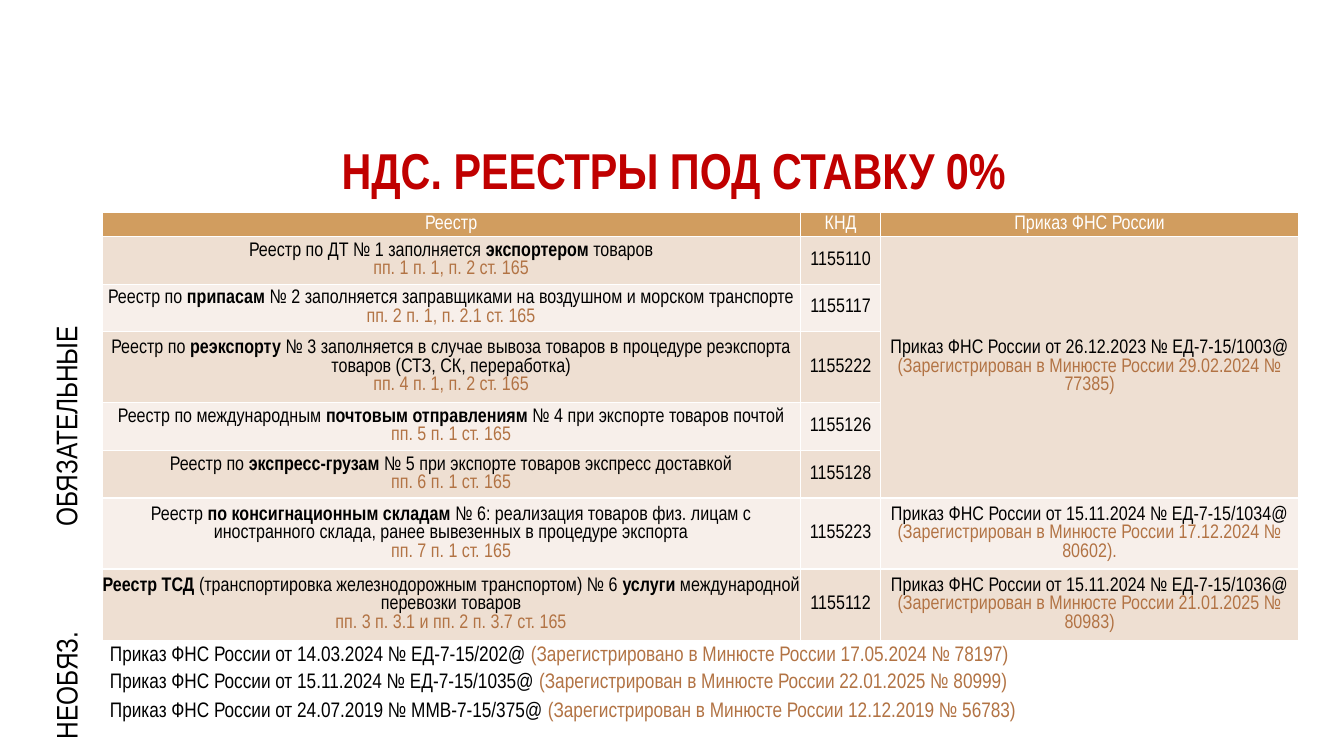
from pptx import Presentation
from pptx.dml.color import RGBColor
from pptx.enum.text import MSO_ANCHOR, PP_ALIGN
from pptx.util import Cm, Pt

FONT = "Arial Narrow"
BLACK, BROWN, WHITE, RED = "000000", "B27344", "FFFFFF", "C00000"
HEAD, DARK, LIGHT = "D19D5F", "EEDFD2", "F7EFEA"


def color(code):
    return RGBColor.from_string(code)


def add_run(para, text, size, code=BLACK, bold=False):
    run = para.add_run()
    run.text = text
    run.font.name = FONT
    run.font.size = Pt(size)
    run.font.bold = bold
    run.font.color.rgb = color(code)


deck = Presentation()
deck.slide_width, deck.slide_height = Cm(33.87), Cm(19.05)
slide = deck.slides.add_slide(deck.slide_layouts[6])

# Title
title = slide.shapes.add_textbox(Cm(1.96), Cm(3.28), Cm(30.05), Cm(3.23))
frame = title.text_frame
frame.word_wrap = True
frame.margin_top = Cm(0.41)
para = frame.paragraphs[0]
para.alignment = PP_ALIGN.CENTER
para.line_spacing = 0.9
add_run(para, "НДС. РЕЕСТРЫ ПОД СТАВКУ 0%", 36, RED, True)

# Registers: pieces of the name (every second one bold), article, code
rows = [
    (["Реестр по ДТ № 1 заполняется ", "экспортером", " товаров"],
     "пп. 1 п. 1, п. 2 ст. 165", "1155110"),
    (["Реестр по ", "припасам",
      " № 2 заполняется заправщиками на воздушном и морском транспорте"],
     "пп. 2 п. 1, п. 2.1 ст. 165", "1155117"),
    (["Реестр по ", "реэкспорту",
      " № 3 заполняется в случае вывоза товаров в процедуре реэкспорта"
      " товаров (СТЗ, СК, переработка)"],
     "пп. 4 п. 1, п. 2 ст. 165", "1155222"),
    (["Реестр по международным ", "почтовым отправлениям ",
      "№ 4 при экспорте товаров почтой"],
     "пп. 5 п. 1 ст. 165", "1155126"),
    (["Реестр по ", "экспресс-грузам",
      " № 5 при экспорте товаров экспресс доставкой"],
     "пп. 6 п. 1 ст. 165", "1155128"),
    (["Реестр ", "по консигнационным складам ",
      "№ 6: реализация товаров физ. лицам с иностранного склада,"
      " ранее вывезенных в процедуре экспорта"],
     "пп. 7 п. 1 ст. 165", "1155223"),
    (["", "Реестр ТСД ", "(транспортировка железнодорожным транспортом) № 6 ",
      "услуги", " международной перевозки товаров"],
     "пп. 3 п. 3.1 и пп. 2 п. 3.7 ст. 165", "1155112"),
]
# Orders by the row where they start
orders = {
    1: ("Приказ ФНС России от 26.12.2023 № ЕД-7-15/1003@ ",
        "(Зарегистрирован в Минюсте России 29.02.2024 № 77385)"),
    6: ("Приказ ФНС России от 15.11.2024 № ЕД-7-15/1034@ ",
        "(Зарегистрирован в Минюсте России 17.12.2024 № 80602)."),
    7: ("Приказ ФНС России от 15.11.2024 № ЕД-7-15/1036@ ",
        "(Зарегистрирован в Минюсте России 21.01.2025 № 80983)"),
}

# Main table
grid = slide.shapes.add_table(8, 3, Cm(2.57), Cm(5.36), Cm(30.15), Cm(10.74)).table
for col, width in zip(grid.columns, [17.6, 2.03, 10.52]):
    col.width = Cm(width)
for row, height in zip(grid.rows, [0.6, 1.2, 1.2, 1.79, 1.2, 1.2, 1.79, 1.79]):
    row.height = Cm(height)
for i, row in enumerate(grid.rows):
    for cell in row.cells:
        cell.margin_left = cell.margin_right = 0
        cell.margin_top = cell.margin_bottom = 0
        cell.vertical_anchor = MSO_ANCHOR.MIDDLE
        cell.fill.solid()
        cell.fill.fore_color.rgb = color(HEAD if i == 0 else DARK if i % 2 else LIGHT)
        cell.text_frame.paragraphs[0].alignment = PP_ALIGN.CENTER
grid.cell(1, 2).merge(grid.cell(5, 2))

for j, text in enumerate(["Реестр", "КНД", "Приказ ФНС России"]):
    add_run(grid.cell(0, j).text_frame.paragraphs[0], text, 14, WHITE)
for i, (parts, law, code) in enumerate(rows, 1):
    para = grid.cell(i, 0).text_frame.paragraphs[0]
    for n, part in enumerate(parts):
        if part:
            add_run(para, part, 14, bold=n % 2 == 1)
    para.add_line_break()
    add_run(para, law, 14, BROWN)
    add_run(grid.cell(i, 1).text_frame.paragraphs[0], code, 14)
for i, (order, note) in orders.items():
    para = grid.cell(i, 2).text_frame.paragraphs[0]
    add_run(para, order, 14)
    add_run(para, note, 14, BROWN)

# Side labels
for text, left, top, width in [("ОБЯЗАТЕЛЬНЫЕ", -3.71, 10.16, 10.74),
                               ("НЕОБЯЗ.", -0.28, 16.69, 3.89)]:
    label = slide.shapes.add_textbox(Cm(left), Cm(top), Cm(width), Cm(1.17))
    label.rotation = 270
    label.text_frame.word_wrap = True
    para = label.text_frame.paragraphs[0]
    para.alignment = PP_ALIGN.CENTER
    add_run(para, text, 21.3)

# Optional orders
extra = [
    ("Приказ ФНС России от 14.03.2024 № ЕД-7-15/202@ ",
     "(Зарегистрировано в Минюсте России 17.05.2024 № 78197)", 0.66),
    ("Приказ ФНС России от 15.11.2024 № ЕД-7-15/1035@ ",
     "(Зарегистрирован в Минюсте России 22.01.2025 № 80999)", 0.66),
    ("Приказ ФНС России от 24.07.2019 № ММВ-7-15/375@ ",
     "(Зарегистрирован в Минюсте России 12.12.2019 № 56783)", 0.81),
]
foot = slide.shapes.add_table(3, 1, Cm(2.77), Cm(16.21), Cm(29.79), Cm(2.13)).table
foot.first_row = foot.horz_banding = False
for i, (order, note, height) in enumerate(extra):
    foot.rows[i].height = Cm(height)
    cell = foot.cell(i, 0)
    cell.margin_left = cell.margin_right = 0
    cell.margin_top = cell.margin_bottom = 0
    cell.vertical_anchor = MSO_ANCHOR.MIDDLE
    cell.fill.background()
    para = cell.text_frame.paragraphs[0]
    add_run(para, order, 15)
    add_run(para, note, 15, BROWN)

deck.save("out.pptx")
